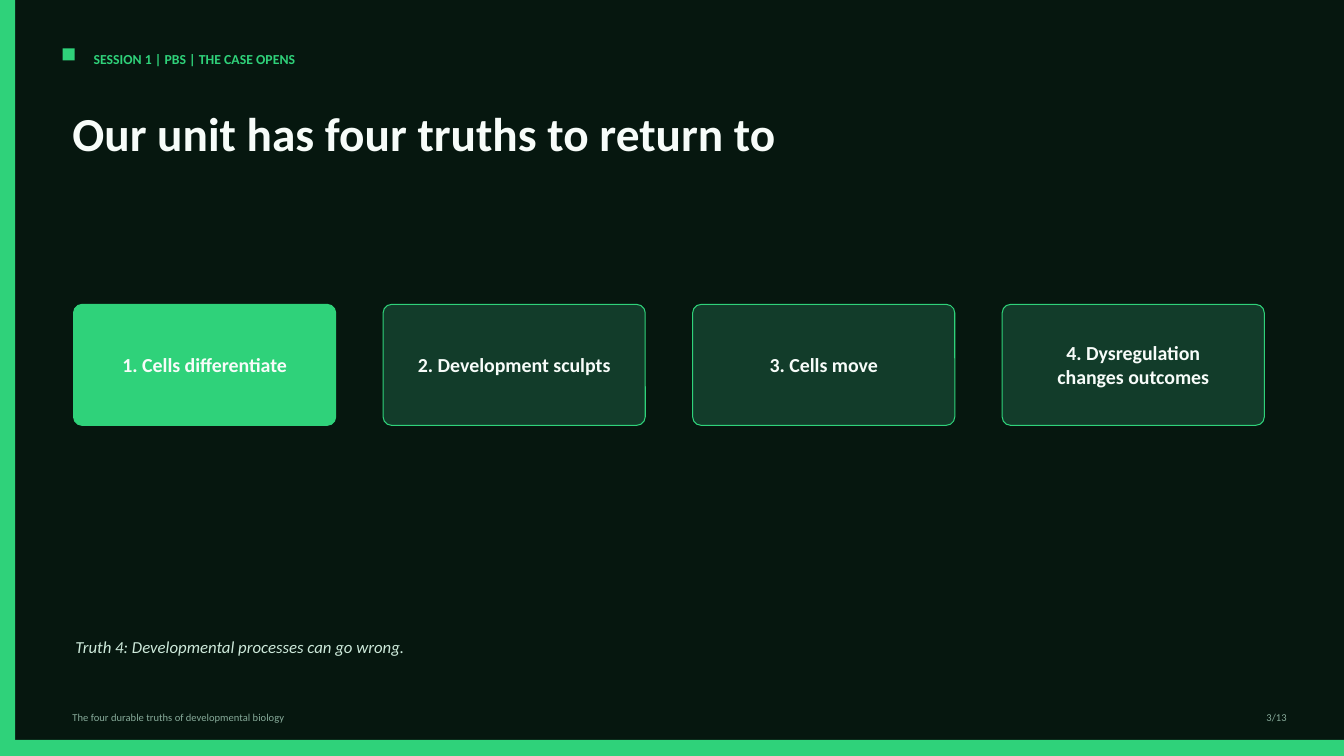
from pptx import Presentation
from pptx.dml.color import RGBColor
from pptx.enum.shapes import MSO_SHAPE
from pptx.enum.text import MSO_ANCHOR, PP_ALIGN
from pptx.util import Inches, Pt

RECTANGLE = MSO_SHAPE.RECTANGLE
ROUNDED = MSO_SHAPE.ROUNDED_RECTANGLE
LEFT, CENTER, RIGHT = PP_ALIGN.LEFT, PP_ALIGN.CENTER, PP_ALIGN.RIGHT
TOP, MIDDLE = MSO_ANCHOR.TOP, MSO_ANCHOR.MIDDLE

FONT = "Calibri"
BACKGROUND = "06170F"
ACCENT = "2FD27A"
CARD_FILL = "123C2A"
WHITE = "F7FCF9"
MUTED = "87AB9A"
PALE = "CDE9DA"

SLIDE_WIDTH, SLIDE_HEIGHT = 13.33, 7.5
CARD_LEFT, CARD_TOP, CARD_WIDTH, CARD_HEIGHT = 0.73, 3.02, 2.6, 1.2
CARD_PITCH = 3.07
LABEL_INSET_X, LABEL_INSET_Y = 0.23, 0.21
TRUTHS = [
    "1. Cells differentiate",
    "2. Development sculpts",
    "3. Cells move",
    "4. Dysregulation changes outcomes",
]
ACTIVE_TRUTH = 0


def color(hex_code):
    return RGBColor.from_string(hex_code)


def add_block(slide, kind, left, top, width, height, fill, line=None):
    block = slide.shapes.add_shape(
        kind, Inches(left), Inches(top), Inches(width), Inches(height))
    block.shadow.inherit = False
    block.fill.solid()
    block.fill.fore_color.rgb = color(fill)
    if line:
        block.line.color.rgb = color(line)
        block.line.width = Pt(0.75)
    else:
        block.line.fill.background()
    return block


def add_text(slide, text, left, top, width, height, *, size, ink, bold=False,
             italic=False, align=LEFT, anchor=TOP, spacing=None):
    box = slide.shapes.add_textbox(
        Inches(left), Inches(top), Inches(width), Inches(height))
    frame = box.text_frame
    frame.word_wrap = True
    frame.vertical_anchor = anchor
    paragraph = frame.paragraphs[0]
    paragraph.alignment = align
    if spacing:
        paragraph.line_spacing = spacing
    run = paragraph.add_run()
    run.text = text
    run.font.name = FONT
    run.font.size = Pt(size)
    run.font.bold = bold
    run.font.italic = italic
    run.font.color.rgb = color(ink)


def add_truth_card(slide, index, truth):
    left = CARD_LEFT + index * CARD_PITCH
    fill = ACCENT if index == ACTIVE_TRUTH else CARD_FILL
    card = add_block(slide, ROUNDED, left, CARD_TOP, CARD_WIDTH, CARD_HEIGHT,
                     fill, line=ACCENT)
    card.adjustments[0] = 0.07
    add_text(slide, truth, left + LABEL_INSET_X, CARD_TOP + LABEL_INSET_Y,
             CARD_WIDTH - 2 * LABEL_INSET_X, CARD_HEIGHT - 2 * LABEL_INSET_Y,
             size=14.2, ink=WHITE, bold=True, align=CENTER, anchor=MIDDLE)


def add_frame(slide):
    add_block(slide, RECTANGLE, 0, 0, 0.15, SLIDE_HEIGHT, ACCENT)
    add_block(slide, RECTANGLE, 0, 7.34, SLIDE_WIDTH, 0.16, ACCENT)
    add_block(slide, RECTANGLE, 0.62, 0.48, 0.12, 0.12, ACCENT)
    add_text(slide, "SESSION 1 | PBS | THE CASE OPENS", 0.83, 0.45, 6.46, 0.25,
             size=9.8, ink=ACCENT, bold=True)
    add_text(slide, "The four durable truths of developmental biology",
             0.62, 7, 9.38, 0.19, size=7.5, ink=MUTED)
    add_text(slide, "3/13", 12.03, 7, 0.83, 0.19,
             size=7.5, ink=MUTED, align=RIGHT)


def main():
    deck = Presentation()
    deck.slide_width = Inches(SLIDE_WIDTH)
    deck.slide_height = Inches(SLIDE_HEIGHT)
    slide = deck.slides.add_slide(deck.slide_layouts[6])
    slide.background.fill.solid()
    slide.background.fill.fore_color.rgb = color(BACKGROUND)

    add_frame(slide)
    add_text(slide, "Our unit has four truths to return to",
             0.62, 1.04, 11.46, 0.88,
             size=33.8, ink=WHITE, bold=True, spacing=0.92)
    for index, truth in enumerate(TRUTHS):
        add_truth_card(slide, index, truth)
    add_text(slide, "Truth 4: Developmental processes can go wrong.",
             0.65, 6.25, 11.25, 0.46,
             size=12, ink=PALE, italic=True, spacing=1.1)

    deck.save("out.pptx")


if __name__ == "__main__":
    main()
